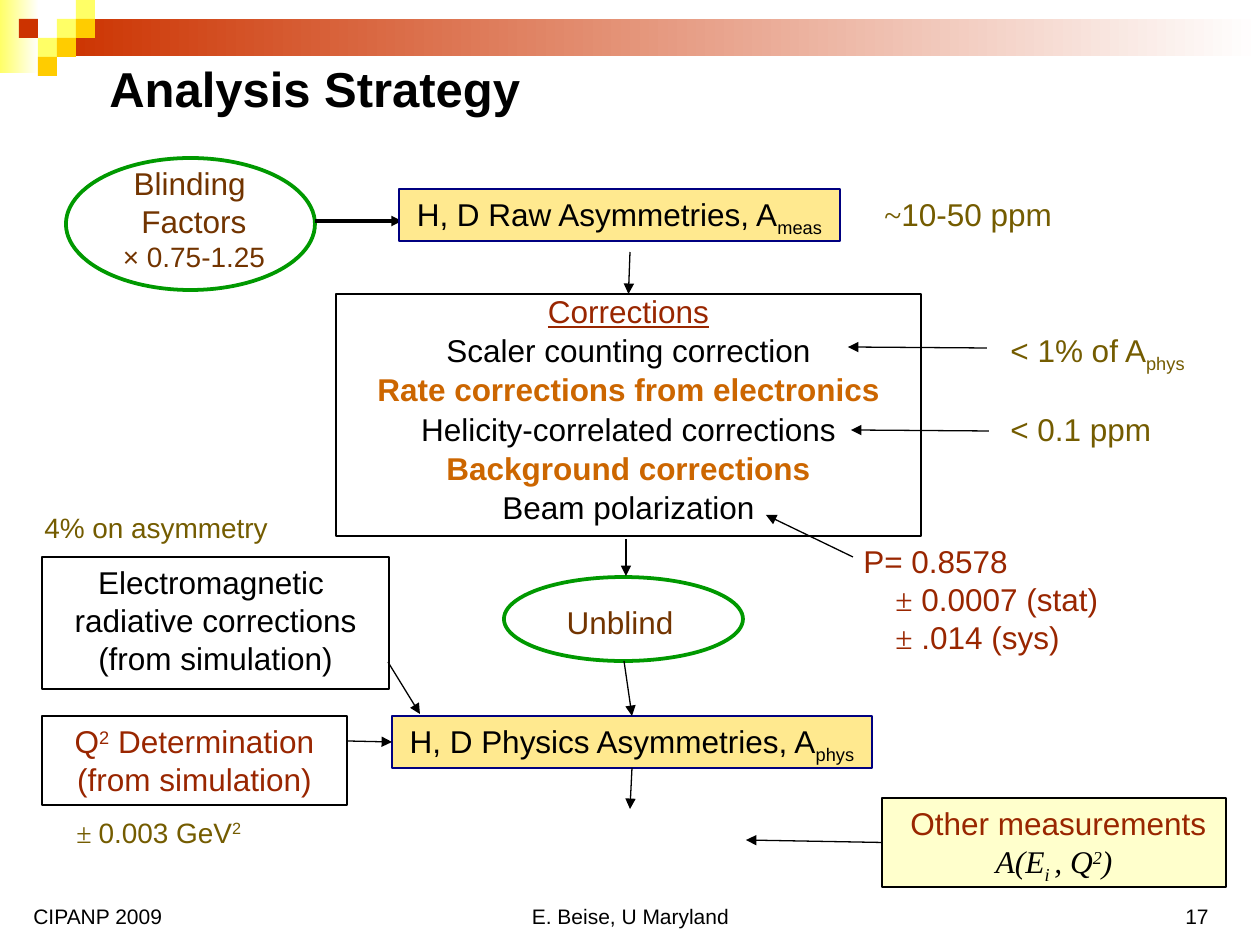
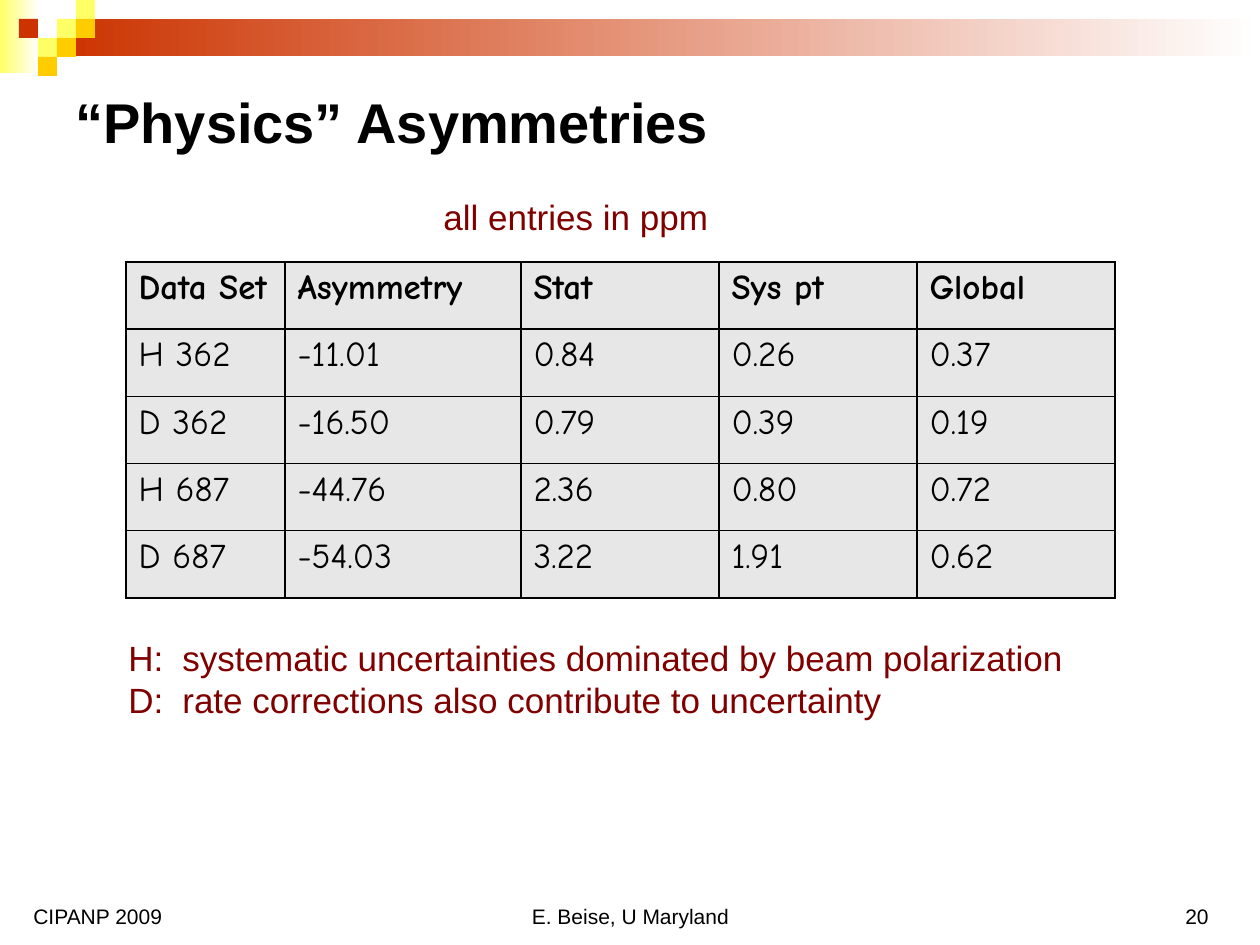
import pptx
import pptx.util
import pptx.dml.color
import pptx.enum.shapes
import pptx.enum.text
import pptx.oxml

RGBColor = pptx.dml.color.RGBColor
KIND = pptx.enum.shapes.MSO_SHAPE
ALIGN = pptx.enum.text.PP_ALIGN
ANCHOR = pptx.enum.text.MSO_ANCHOR
NS = 'xmlns:a="http://schemas.openxmlformats.org/drawingml/2006/main"'

BLACK = RGBColor(0x00, 0x00, 0x00)
WHITE = RGBColor(0xFF, 0xFF, 0xFF)
RED = RGBColor(0xCC, 0x33, 0x00)
GOLD = RGBColor(0xFF, 0xCC, 0x00)
YELLOW = RGBColor(0xFF, 0xFF, 0x66)
CREAM = RGBColor(0xFF, 0xFF, 0xCC)
SAND = RGBColor(0xFF, 0xE9, 0x8F)
NAVY = RGBColor(0x00, 0x00, 0x80)
GREEN = RGBColor(0x00, 0x99, 0x00)
BROWN = RGBColor(0x72, 0x34, 0x00)
RUST = RGBColor(0x99, 0x26, 0x00)
ORANGE = RGBColor(0xCC, 0x66, 0x00)
OLIVE = RGBColor(0x74, 0x5C, 0x00)
MAROON = RGBColor(0x80, 0x00, 0x00)
GRAY = RGBColor(0xE7, 0xE7, 0xE7)

SANS, SERIF, HAND = "Arial", "Times New Roman", "Comic Neue"
SUB, SUP = {"base": -25}, {"base": 30}
PX_PER_INCH = 126


def px(length):
    return pptx.util.Emu(round(length * 914400 / PX_PER_INCH))


def inside(box, left, top, width, height):
    return box[0] + left, box[1] + top, width, height


def write_span(para, text, size=18, color=BLACK, font=SANS, bold=False,
               italic=False, underline=False, base=0):
    span = para.add_run()
    span.text = text
    span.font.size = pptx.util.Pt(size)
    span.font.color.rgb = color
    span.font.name = font
    span.font.bold = bold
    span.font.italic = italic
    span.font.underline = underline
    if base:
        span.font._element.set("baseline", str(base * 1000))


def write_lines(frame, lines, align=ALIGN.LEFT, anchor=ANCHOR.TOP, wrap=True,
                spacing=None, **style):
    frame.word_wrap = wrap
    frame.vertical_anchor = anchor
    for index, line in enumerate(lines):
        para = frame.add_paragraph() if index else frame.paragraphs[0]
        para.alignment = align
        if spacing:
            para.line_spacing = spacing
        for text, changes in [(line, {})] if isinstance(line, str) else line:
            write_span(para, text, **{**style, **changes})


def indent(para, left, first=0):
    properties = para._p.get_or_add_pPr()
    properties.set("marL", str(px(left)))
    properties.set("indent", str(px(first)))


def add_text(page, box, *lines, **style):
    label = page.shapes.add_textbox(*map(px, box))
    write_lines(label.text_frame, lines, **style)
    return label


def add_block(page, box, *lines, kind=KIND.RECTANGLE, fill=None, line=BLACK,
              weight=1.5, **style):
    block = page.shapes.add_shape(kind, *map(px, box))
    block.shadow.inherit = False
    if fill is None:
        block.fill.background()
    else:
        block.fill.solid()
        block.fill.fore_color.rgb = fill
    if line is None:
        block.line.fill.background()
    else:
        block.line.color.rgb = line
        block.line.width = pptx.util.Pt(weight)
    if lines:
        write_lines(block.text_frame, lines, align=ALIGN.CENTER, **style)
    return block


def add_fade(page, box, color):
    strip = add_block(page, box, line=None)
    strip.fill.gradient()
    strip.fill.gradient_angle = 0
    for stop, shade in zip(strip.fill.gradient_stops, (color, WHITE)):
        stop.color.rgb = shade


def add_arrow(page, start, end, weight=0.75, source=None, target=None):
    arrow = page.shapes.add_connector(
        pptx.enum.shapes.MSO_CONNECTOR.STRAIGHT, *map(px, start + end))
    arrow.line.color.rgb = BLACK
    arrow.line.width = pptx.util.Pt(weight)
    arrow.line._get_or_add_ln().append(
        pptx.oxml.parse_xml(f'<a:tailEnd {NS} type="triangle"/>'))
    arrow._element.spPr.append(pptx.oxml.parse_xml(f"<a:effectLst {NS}/>"))
    if source:
        arrow.begin_connect(*source)
    if target:
        arrow.end_connect(*target)


def add_band(page, box):
    step = 19
    add_fade(page, inside(box, 0, 0, 39, 73), YELLOW)
    add_fade(page, inside(box, 3 * step, step, box[2] - 3 * step, 37), RED)
    tiles = ((3, 1, YELLOW), (4, 0, YELLOW), (4, 1, GOLD), (2, 2, YELLOW),
             (1, 1, RED), (3, 2, GOLD), (2, 3, GOLD))
    for column, row, color in tiles:
        tile = inside(box, column * step, row * step, step, step)
        add_block(page, tile, fill=color, line=None)


def add_footer(page, box, number):
    style = {"size": 12, "anchor": ANCHOR.BOTTOM}
    add_text(page, inside(box, 0, 0, 294, 66), "CIPANP 2009", **style)
    style["align"] = ALIGN.CENTER
    add_text(page, inside(box, 410, 3, 399, 63), "E. Beise, U Maryland", **style)
    add_text(page, inside(box, 1134, 3, 84, 63), number, **style)


def add_page(deck, title, title_box, title_size, number):
    page = deck.slides.add_slide(deck.slide_layouts[6])
    add_band(page, (0, 0, 1260, 75))
    add_text(page, title_box, title, size=title_size, bold=True,
             anchor=ANCHOR.MIDDLE)
    add_footer(page, (21, 869, 1218, 66), number)
    return page


def add_oval(page, box, label_box, *lines):
    add_block(page, box, kind=KIND.OVAL, line=GREEN, weight=2.15)
    add_text(page, label_box, *lines, color=BROWN, align=ALIGN.CENTER,
             anchor=ANCHOR.MIDDLE)


def add_asymmetry(page, box, text, subscript):
    return add_block(page, box, [(text, {}), (subscript, SUB)], fill=SAND,
                     line=NAVY, weight=0.75, wrap=False)


def add_blinding(page, box):
    add_oval(page, inside(box, 3, 0, 249, 132), inside(box, 0, 0, 262, 122),
             "Blinding ", "Factors", [("× 0.75-1.25", {"size": 16})])
    add_arrow(page, (box[0] + 252, box[1] + 63), (box[0] + 339, box[1] + 63), 2)


def add_analysis_chain(page, box):
    left, top = box[:2]
    strong = {"color": ORANGE, "bold": True}
    add_asymmetry(page, inside(box, 63, 0, 441, 52),
                  "H, D Raw Asymmetries, A", "meas")
    corrections = add_block(
        page, inside(box, 0, 105, 585, 242),
        [("Corrections", {"color": RUST, "underline": True})],
        "Scaler counting correction",
        [("Rate corrections from electronics", strong)],
        "Helicity-correlated corrections",
        [("Background corrections", strong)],
        "Beam polarization", spacing=1.04)
    corrections.text_frame.paragraphs[0].line_spacing = pptx.util.Pt(16.8)
    add_oval(page, inside(box, 168, 388, 239, 84),
             inside(box, 158, 413, 252, 40), "Unblind")
    physics = add_asymmetry(page, inside(box, 56, 527, 480, 52),
                            "H, D Physics Asymmetries, A", "phys")
    add_arrow(page, (left + 294, top + 63), (left + 294, top + 105),
              target=(corrections, 0))
    add_arrow(page, (left + 290, top + 350), (left + 290, top + 387))
    add_arrow(page, (left + 288, top + 472), (left + 294, top + 527),
              target=(physics, 0))
    add_arrow(page, (left + 294, top + 578), (left + 294, top + 620),
              source=(physics, 2))
    return physics


def add_simulation_inputs(page, box, physics):
    left, top = box[:2]
    add_text(page, inside(box, 0, 0, 252, 47), "4% on asymmetry", size=16,
             color=OLIVE, wrap=False)
    add_block(page, inside(box, 10, 53, 347, 132), "Electromagnetic ",
              "radiative corrections", "(from simulation)")
    add_block(page, inside(box, 10, 212, 305, 89),
              [("Q", {}), ("2", SUP), (" Determination", {})],
              "(from simulation)", color=RUST)
    add_text(page, inside(box, 32, 305, 199, 47),
             [("± ", {"font": SERIF}), ("0.003 GeV", {}), ("2", SUP)],
             size=16, color=OLIVE, wrap=False)
    add_arrow(page, (left + 356, top + 158), (left + 388, top + 210))
    add_arrow(page, (left + 315, top + 237), (left + 360, top + 237),
              target=(physics, 1))


def add_size_notes(page, box):
    left, top = box[:2]
    style = {"color": OLIVE, "wrap": False}
    add_text(page, inside(box, 24, 0, 205, 50),
             [("~", {"font": SERIF}), ("10-50 ppm", {})], **style)
    add_text(page, inside(box, 150, 136, 207, 50),
             [("< 1% of A", {}), ("phys", SUB)], **style)
    add_text(page, inside(box, 150, 215, 176, 50), "< 0.1 ppm", **style)
    add_arrow(page, (left + 139, top + 159), (left, top + 158))
    add_arrow(page, (left + 141, top + 242), (left + 3, top + 241))


def add_polarization(page, box):
    left, top = box[:2]
    sign = ("±", {"font": SERIF})
    label = add_text(page, inside(box, 85, 21, 378, 127), "P= 0.8578",
                     [sign, (" 0.0007 (stat)", {})],
                     [sign, (" .014 (sys)", {})], color=RUST)
    for para in label.text_frame.paragraphs[1:]:
        indent(para, 32)
    add_arrow(page, (left + 87, top + 42), (left, top))


def add_other_measurements(page, box):
    formula = {"font": SERIF, "color": BLACK, "italic": True}
    block = add_block(
        page, inside(box, 136, 0, 344, 89), " Other measurements",
        [("A(E", formula), ("i ", {**formula, **SUB}), (", Q", formula),
         ("2", {**formula, **SUP}), (")", formula)],
        fill=CREAM, color=RUST)
    add_arrow(page, (box[0] + 138, box[1] + 42), (box[0], box[1] + 42),
              source=(block, 1))


def build_strategy(deck):
    page = add_page(deck, "Analysis Strategy", (97, 32, 1076, 111), 28, "17")
    add_blinding(page, (63, 158, 339, 132))
    physics = add_analysis_chain(page, (336, 189, 585, 620))
    add_simulation_inputs(page, (32, 504, 360, 352), physics)
    add_size_notes(page, (848, 189, 357, 265))
    add_polarization(page, (766, 515, 463, 148))
    add_other_measurements(page, (746, 798, 480, 89))


def style_cell(cell, text, bold):
    properties = cell._tc.get_or_add_tcPr()
    for side in "LRTB":
        properties.append(pptx.oxml.parse_xml(
            f'<a:ln{side} {NS} w="12700"><a:solidFill>'
            f'<a:srgbClr val="{BLACK}"/></a:solidFill></a:ln{side}>'))
    cell.fill.solid()
    cell.fill.fore_color.rgb = GRAY
    write_span(cell.text_frame.paragraphs[0], text, size=20, font=HAND, bold=bold)


def add_results(page, box):
    rows = (("Data Set", "Asymmetry", "Stat", "Sys pt", "Global"),
            ("H 362", "-11.01", "0.84", "0.26", "0.37"),
            ("D 362", "-16.50", "0.79", "0.39", "0.19"),
            ("H 687", "-44.76", "2.36", "0.80", "0.72"),
            ("D 687", "-54.03", "3.22", "1.91", "0.62"))
    table = page.shapes.add_table(len(rows), len(rows[0]), *map(px, box)).table
    table.first_row = table.horz_banding = False
    for column, width in zip(table.columns, (159, 236, 198, 198, 198)):
        column.width = px(width)
    for row, values in enumerate(rows):
        table.rows[row].height = px(box[3] / len(rows))
        for column, value in enumerate(values):
            style_cell(table.cell(row, column), value, row == 0)


def build_asymmetries(deck):
    page = add_page(deck, "“Physics” Asymmetries", (63, 63, 1134, 116), 32, "20")
    style = {"size": 20, "color": MAROON, "wrap": False}
    add_text(page, (431, 189, 292, 55), "all entries in ppm", **style)
    add_results(page, (126, 262, 989, 336))
    summary = add_text(page, (116, 630, 968, 97),
                       "H:\tsystematic uncertainties dominated by beam polarization",
                       "D:\trate corrections also contribute to uncertainty",
                       **style)
    for para in summary.text_frame.paragraphs:
        indent(para, 54, -54)


def main():
    deck = pptx.Presentation()
    deck.slide_width, deck.slide_height = px(1260), px(945)
    build_strategy(deck)
    build_asymmetries(deck)
    deck.save("out.pptx")


if __name__ == "__main__":
    main()
